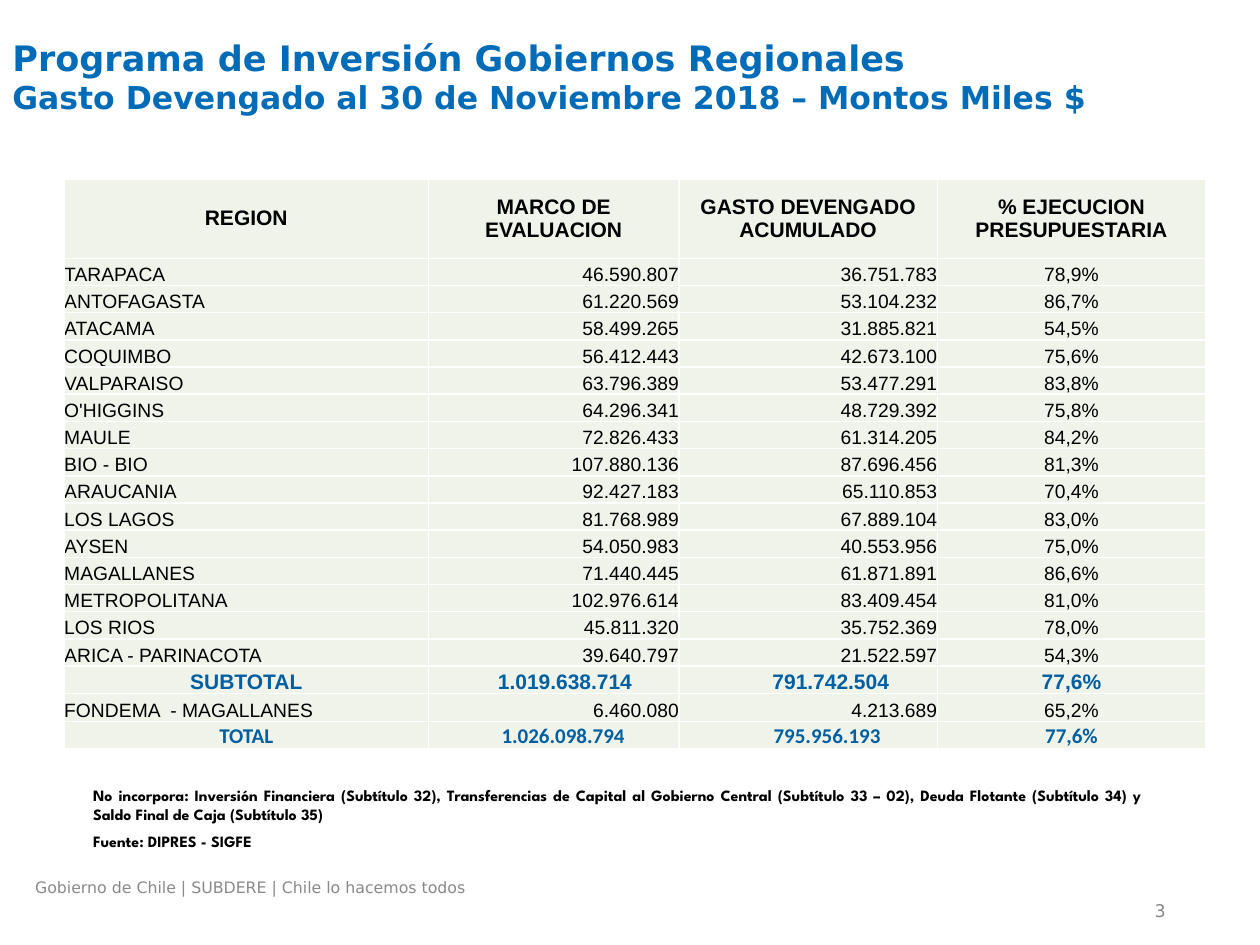
"""Build the slide on regional government investment spending to November 2018."""
from lxml import etree
from pptx import Presentation
from pptx import util as u
from pptx.dml import color
from pptx.enum import text
from pptx.oxml import ns

Inches = u.Inches
COLORS = {"title": "006CB7", "total": "005FA1", "muted": "898989",
          "ink": "000000", "cell": "EFF3EA", "border": "FFFFFF"}
LEFT, CENTER, RIGHT, JUSTIFY = (text.PP_ALIGN.LEFT, text.PP_ALIGN.CENTER,
                                text.PP_ALIGN.RIGHT, text.PP_ALIGN.JUSTIFY)


def write(paragraph, content, size=11, font="Arial", hue="ink", bold=False, align=LEFT):
    paragraph.alignment = align
    run = paragraph.add_run()
    run.text = content
    run.font.size = u.Pt(size)
    run.font.name = font
    run.font.bold = bold
    run.font.color.rgb = color.RGBColor.from_string(COLORS[hue])


def add_frame(left, top, width, height):
    box = slide.shapes.add_textbox(Inches(left), Inches(top), Inches(width), Inches(height))
    box.text_frame.word_wrap = True
    return box.text_frame


prs = Presentation()
prs.slide_width, prs.slide_height = Inches(10), Inches(7.5)
slide = prs.slides.add_slide(prs.slide_layouts[6])

page_number = add_frame(7.02, 7.12, 2.33, 0.21)
page_number.vertical_anchor = text.MSO_ANCHOR.MIDDLE
write(page_number.paragraphs[0], "3", size=10, font="DejaVu Sans", hue="muted", align=RIGHT)

title = add_frame(0, 0.24, 8.97, 0.94).paragraphs[0]
title_style = {"font": "DejaVu Sans", "hue": "title", "bold": True}
write(title, "Programa de Inversión Gobiernos Regionales", size=20, **title_style)
title.add_line_break()
write(title, "Gasto Devengado al 30 de Noviembre 2018 – Montos Miles $", size=18, **title_style)

footer = add_frame(0.18, 6.92, 6.48, 0.27)
write(footer.paragraphs[0], "Gobierno de Chile | SUBDERE | Chile lo hacemos todos",
      size=9, font="DejaVu Sans", hue="muted")

notes = add_frame(0.64, 6.19, 8.51, 0.63)
notes.auto_size = text.MSO_AUTO_SIZE.SHAPE_TO_FIT_TEXT
note_style = {"size": 9, "font": "League Spartan", "bold": True}
write(notes.paragraphs[0],
      "No incorpora: Inversión Financiera (Subtítulo 32), Transferencias de Capital al "
      "Gobierno Central (Subtítulo 33 – 02), Deuda Flotante (Subtítulo 34) y "
      "Saldo Final de Caja (Subtítulo 35)", align=JUSTIFY, **note_style)
source = notes.add_paragraph()
source.space_before = u.Pt(4.5)
write(source, "Fuente: DIPRES - SIGFE", **note_style)

spending = [
    ("REGION", "MARCO DE EVALUACION", "GASTO DEVENGADO ACUMULADO", "% EJECUCION PRESUPUESTARIA"),
    ("TARAPACA", "46.590.807", "36.751.783", "78,9%"),
    ("ANTOFAGASTA", "61.220.569", "53.104.232", "86,7%"),
    ("ATACAMA", "58.499.265", "31.885.821", "54,5%"),
    ("COQUIMBO", "56.412.443", "42.673.100", "75,6%"),
    ("VALPARAISO", "63.796.389", "53.477.291", "83,8%"),
    ("O'HIGGINS", "64.296.341", "48.729.392", "75,8%"),
    ("MAULE", "72.826.433", "61.314.205", "84,2%"),
    ("BIO - BIO", "107.880.136", "87.696.456", "81,3%"),
    ("ARAUCANIA", "92.427.183", "65.110.853", "70,4%"),
    ("LOS LAGOS", "81.768.989", "67.889.104", "83,0%"),
    ("AYSEN", "54.050.983", "40.553.956", "75,0%"),
    ("MAGALLANES", "71.440.445", "61.871.891", "86,6%"),
    ("METROPOLITANA", "102.976.614", "83.409.454", "81,0%"),
    ("LOS RIOS", "45.811.320", "35.752.369", "78,0%"),
    ("ARICA - PARINACOTA", "39.640.797", "21.522.597", "54,3%"),
    ("SUBTOTAL", "1.019.638.714", "791.742.504", "77,6%"),
    ("FONDEMA  - MAGALLANES", "6.460.080", "4.213.689", "65,2%"),
    ("TOTAL", "1.026.098.794", "795.956.193", "77,6%"),
]
column_widths = [2.89, 1.99, 2.05, 2.13]
column_aligns = [LEFT, RIGHT, RIGHT, CENTER]
summary_font = {"SUBTOTAL": "Arial", "TOTAL": "Calibri"}
summary_indent = {"SUBTOTAL": (0, 0.18, 0.36, 0), "TOTAL": (0, 0.15, 0.3, 0)}
table_height, header_height, closing_height = 4.53, 0.63, 0.22
region_height = (table_height - header_height - 3 * closing_height) / 15

table = slide.shapes.add_table(len(spending), len(column_widths), Inches(0.51), Inches(1.42),
                               Inches(sum(column_widths)), Inches(table_height)).table
for column, width in zip(table.columns, column_widths):
    column.width = Inches(width)

for r, record in enumerate(spending):
    region = record[0]
    is_header, is_summary = r == 0, region in summary_font
    table.rows[r].height = Inches(
        header_height if is_header else region_height if r <= 15 else closing_height)
    for c, value in enumerate(record):
        cell = table.cell(r, c)
        cell.margin_right = cell.margin_top = cell.margin_bottom = 0
        cell.margin_left = Inches(summary_indent[region][c] if is_summary else 0)
        cell.vertical_anchor = text.MSO_ANCHOR.MIDDLE if is_header else text.MSO_ANCHOR.BOTTOM
        for side in ("lnL", "lnR", "lnT", "lnB"):
            border = etree.SubElement(cell._tc.get_or_add_tcPr(), ns.qn(f"a:{side}"),
                                      w=str(u.Pt(1)))
            line_fill = etree.SubElement(border, ns.qn("a:solidFill"))
            etree.SubElement(line_fill, ns.qn("a:srgbClr"), val=COLORS["border"])
        cell.fill.solid()
        cell.fill.fore_color.rgb = color.RGBColor.from_string(COLORS["cell"])
        emphasised = is_header or is_summary
        write(cell.text_frame.paragraphs[0], value,
              size=12 if emphasised else 11,
              font=summary_font.get(region, "Arial"),
              hue="total" if is_summary else "ink",
              bold=emphasised,
              align=CENTER if emphasised else column_aligns[c])

prs.save("out.pptx")
